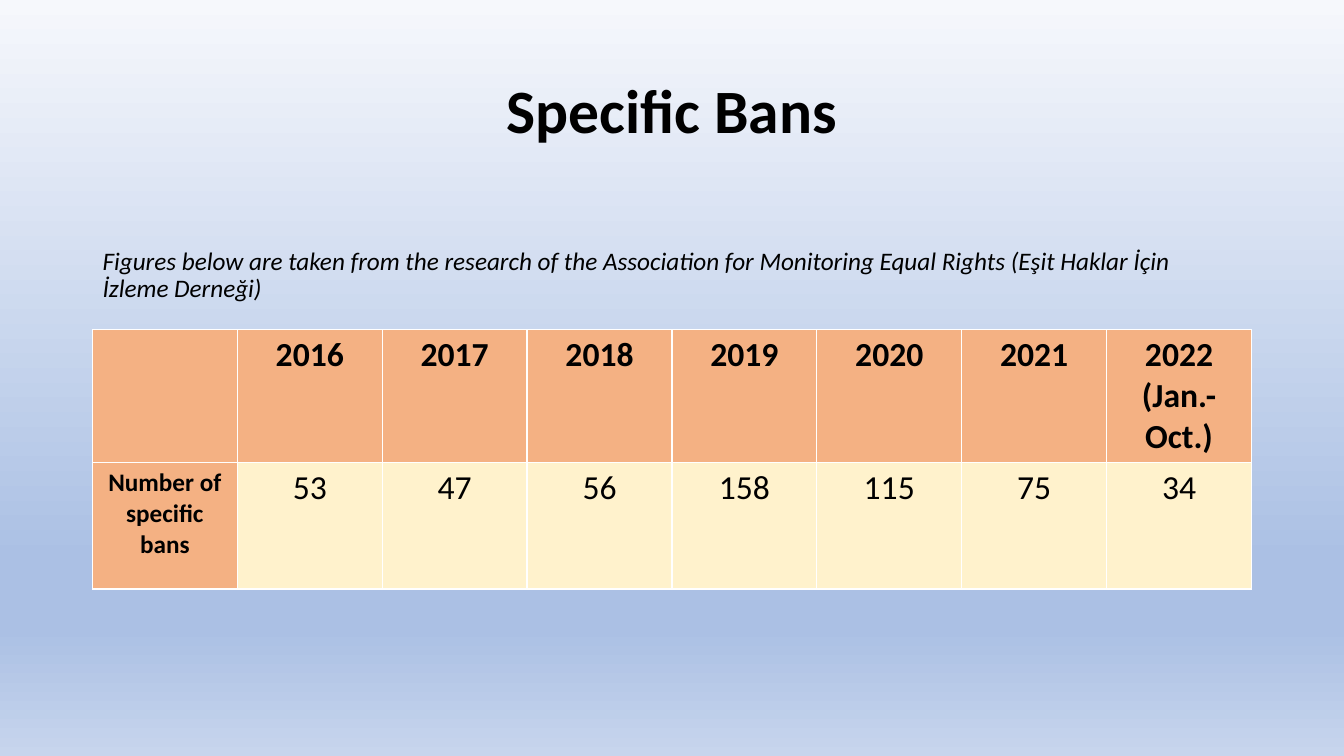
"""Build the slide on specific bans per year."""
from pptx import Presentation
from pptx.dml.color import RGBColor
from pptx.enum.text import MSO_ANCHOR, MSO_AUTO_SIZE, PP_ALIGN
from pptx.oxml import parse_xml
from pptx.oxml.ns import nsdecls, qn
from pptx.util import Cm, Pt

TITLE = "Specific Bans"
NOTE = ("Figures below are taken from the research of the Association for "
        "Monitoring Equal Rights (Eşit Haklar İçin İzleme Derneği)")
ROWS = [
    ["", "2016", "2017", "2018", "2019", "2020", "2021", "2022 (Jan.-Oct.)"],
    ["Number of specific bans", "53", "47", "56", "158", "115", "75", "34"],
]

FONT = "Calibri"
BLACK = RGBColor(0x00, 0x00, 0x00)
ORANGE = RGBColor(0xF4, 0xB1, 0x83)
CREAM = RGBColor(0xFF, 0xF2, 0xCC)
BACKGROUND = [
    (0, RGBColor(0xF6, 0xF8, 0xFC)),
    (74, RGBColor(0xAB, 0xC0, 0xE4)),
    (83, RGBColor(0xAB, 0xC0, 0xE4)),
    (100, RGBColor(0xC7, 0xD5, 0xED)),
]

LEFT, WIDTH = Cm(2.33), Cm(29.21)
ROW_HEIGHT = Cm(3.18)


def write(tf, text, size, bold=False, italic=False, align=PP_ALIGN.CENTER, spacing=None):
    p = tf.paragraphs[0]
    p.alignment = align
    p.line_spacing = spacing
    r = p.add_run()
    r.text = text
    r.font.name = FONT
    r.font.size = Pt(size)
    r.font.bold = bold
    r.font.italic = italic
    r.font.color.rgb = BLACK
    return p


def place(sp, top, height):
    sp.left, sp.top, sp.width, sp.height = LEFT, top, WIDTH, height
    tf = sp.text_frame
    tf.word_wrap = True
    tf.auto_size = MSO_AUTO_SIZE.NONE
    return tf


def paint_background(slide):
    fill = slide.background.fill
    fill.gradient()
    fill.gradient_angle = 270
    stops = "".join(
        f'<a:gs pos="{pos * 1000}"><a:srgbClr val="{color}"/></a:gs>'
        for pos, color in BACKGROUND)
    old = next(slide.element.iter(qn("a:gsLst")))
    old.getparent().replace(old, parse_xml(f'<a:gsLst {nsdecls("a")}>{stops}</a:gsLst>'))


def add_bans_table(slide):
    cols = len(ROWS[0])
    table = slide.shapes.add_table(
        len(ROWS), cols, LEFT, Cm(8.31), WIDTH, ROW_HEIGHT * len(ROWS)).table
    table.first_col = True
    table.horz_banding = False
    for i, row in enumerate(ROWS):
        for j, text in enumerate(row):
            cell = table.cell(i, j)
            heading = i == 0 or j == 0
            cell.fill.solid()
            cell.fill.fore_color.rgb = ORANGE if heading else CREAM
            if text:
                write(cell.text_frame, text, 18 if j == 0 else 24, bold=heading)


def main():
    prs = Presentation()
    prs.slide_width, prs.slide_height = Cm(33.87), Cm(19.05)
    slide = prs.slides.add_slide(prs.slide_layouts[1])
    paint_background(slide)

    tf = place(slide.shapes.title, Cm(1.01), Cm(3.68))
    tf.vertical_anchor = MSO_ANCHOR.MIDDLE
    write(tf, TITLE, 44, bold=True, spacing=0.9)

    tf = place(slide.placeholders[1], Cm(5.07), Cm(12.09))
    tf.margin_top = Cm(1.19)
    p = write(tf, NOTE, 18, italic=True, align=PP_ALIGN.LEFT, spacing=0.9)
    p.space_before = Pt(0)
    pPr = p._p.get_or_add_pPr()
    pPr.set("marL", "0")
    pPr.set("indent", "0")
    pPr.append(parse_xml(f'<a:buNone {nsdecls("a")}/>'))

    add_bans_table(slide)
    prs.save("out.pptx")


if __name__ == "__main__":
    main()
